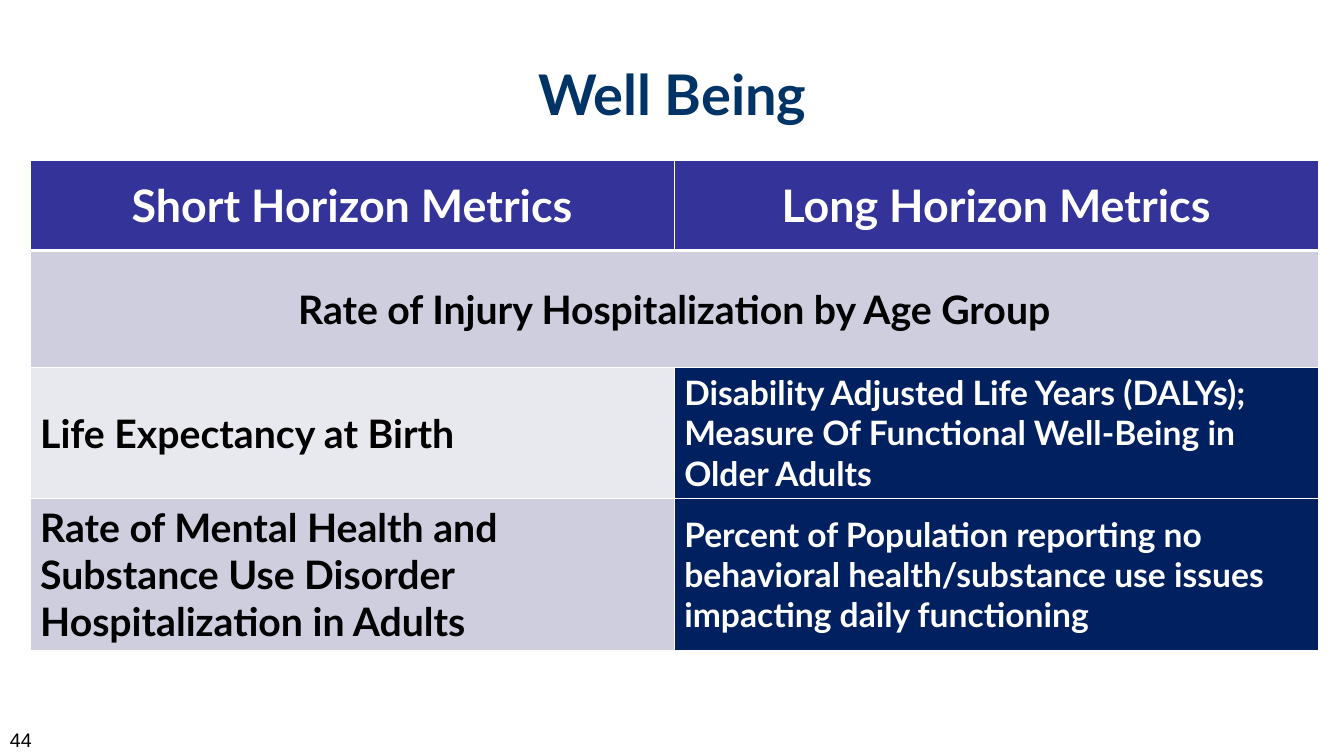
from lxml import etree
from pptx import Presentation
from pptx import util as u
from pptx.dml.color import RGBColor
from pptx.enum import text
from pptx.oxml import ns

WHITE = RGBColor(0xFF, 0xFF, 0xFF)
BLACK = RGBColor(0, 0, 0)
TITLE_BLUE = RGBColor(0x00, 0x33, 0x66)
HEADER_BLUE = RGBColor(0x33, 0x33, 0x99)
NAVY = RGBColor(0x00, 0x20, 0x60)
BAND_DARK = RGBColor(0xCE, 0xCE, 0xDE)
BAND_LIGHT = RGBColor(0xE8, 0xE8, 0xEF)
CENTER, LEFT = text.PP_ALIGN.CENTER, text.PP_ALIGN.LEFT

# Row height in cm, then one (wording, size, colour, fill, alignment) per column
METRIC_ROWS = [
    (2.26, [("Short Horizon Metrics", 32, WHITE, HEADER_BLUE, CENTER),
            ("Long Horizon Metrics", 32, WHITE, HEADER_BLUE, CENTER)]),
    (2.95, [("Rate of Injury Hospitalization by Age Group", 28, BLACK, BAND_DARK, CENTER)]),
    (3.3, [("Life Expectancy at Birth", 28, BLACK, BAND_LIGHT, LEFT),
           ("Disability Adjusted Life Years (DALYs); Measure Of Functional "
            "Well-Being in Older Adults", 24, WHITE, NAVY, LEFT)]),
    (3.83, [("Rate of Mental Health and Substance Use Disorder Hospitalization "
             "in Adults", 28, BLACK, BAND_DARK, LEFT),
            ("Percent of Population reporting no behavioral health/substance use "
             "issues impacting daily functioning", 24, WHITE, NAVY, LEFT)]),
]


def write(frame, wording, size, color, align=LEFT, font="Lato", bold=True):
    paragraph = frame.paragraphs[0]
    paragraph.alignment = align
    run = paragraph.add_run()
    run.text = wording
    run.font.name, run.font.size, run.font.bold = font, u.Pt(size), bold
    run.font.color.rgb = color


def set_borders(cell, **widths):
    """Draw white cell borders; widths in points by side (L, R, T, B)."""
    properties = cell._tc.get_or_add_tcPr()
    for side, width in widths.items():
        line = etree.SubElement(properties, ns.qn(f"a:ln{side}"), w=str(u.Pt(width)))
        fill = etree.SubElement(line, ns.qn("a:solidFill"))
        etree.SubElement(fill, ns.qn("a:srgbClr"), val=str(WHITE))


def add_title(slide, left, top, width, height):
    title = slide.shapes.title
    title.left, title.top, title.width, title.height = left, top, width, height
    title.text_frame.vertical_anchor = text.MSO_ANCHOR.MIDDLE
    write(title.text_frame, "Well Being", 40, TITLE_BLUE, CENTER)


def add_metrics(slide, left, top, width):
    height = u.Cm(sum(row_height for row_height, _ in METRIC_ROWS))
    metrics = slide.shapes.add_table(len(METRIC_ROWS), 2, left, top, width, height).table
    for index, (row_height, entries) in enumerate(METRIC_ROWS):
        metrics.rows[index].height = u.Cm(row_height)
        # A single entry spans both horizons
        if len(entries) == 1:
            metrics.cell(index, 0).merge(metrics.cell(index, 1))
        for column in range(2):
            cell = metrics.cell(index, column)
            set_borders(cell, L=1, R=1, T=3 if index == 1 else 1, B=3 if index == 0 else 1)
            wording, size, color, fill, align = entries[min(column, len(entries) - 1)]
            cell.fill.solid()
            cell.fill.fore_color.rgb = fill
            cell.vertical_anchor = text.MSO_ANCHOR.MIDDLE
            if not cell.is_spanned:
                write(cell.text_frame, wording, size, color, align)


def add_page_number(slide, left, top, width, height):
    number = slide.shapes.add_textbox(left, top, width, height).text_frame
    number.word_wrap = True
    write(number, "44", 14, BLACK, font="Arial", bold=False)


def main():
    deck = Presentation()
    deck.slide_width, deck.slide_height = u.Cm(33.87), u.Cm(19.05)
    slide = deck.slides.add_slide(deck.slide_layouts[5])
    add_title(slide, u.Cm(1.7), u.Cm(0.76), u.Cm(30.48), u.Cm(3.18))
    add_metrics(slide, u.Cm(0.76), u.Cm(4.05), u.Cm(32.46))
    add_page_number(slide, u.Cm(0), u.Cm(18.21), u.Cm(7.9), u.Cm(0.64))
    deck.save("out.pptx")


if __name__ == "__main__":
    main()
